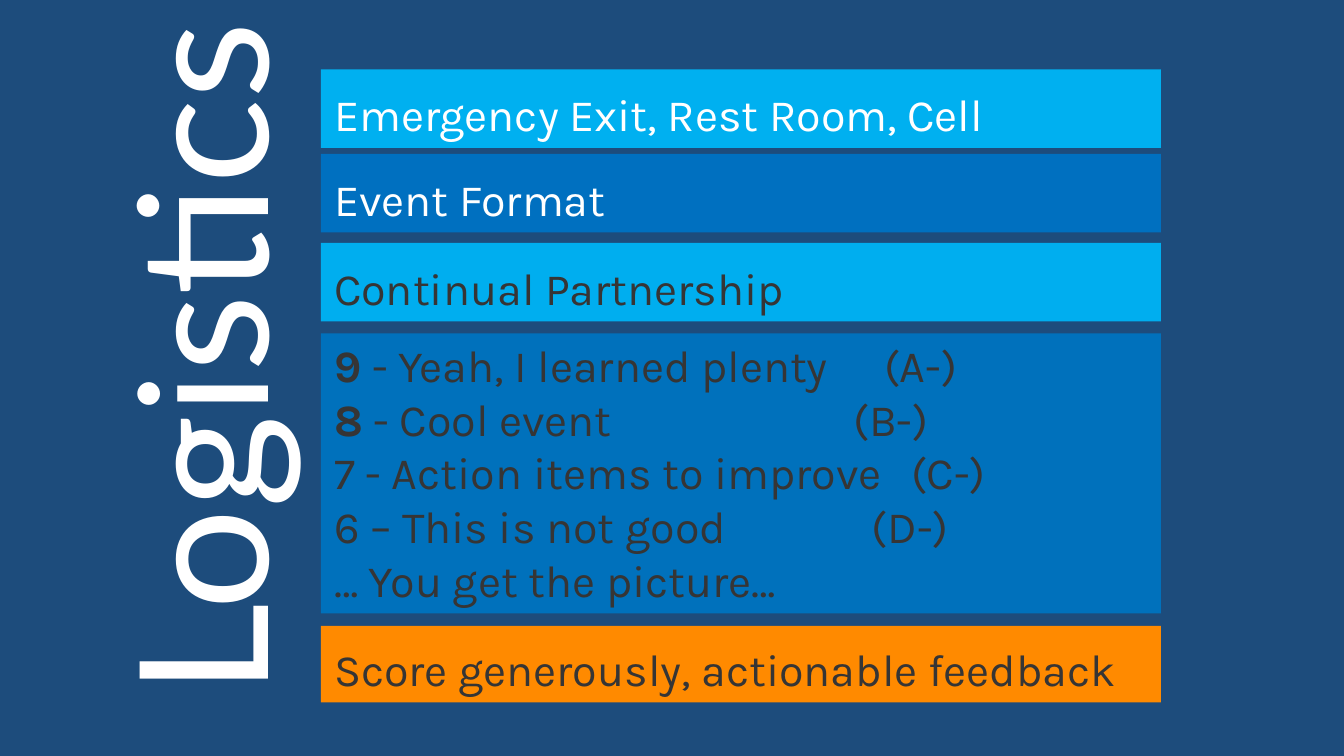
"""Build the Logistics slide: a vertical title beside five stacked bars."""
from pptx import Presentation
from pptx.dml.color import RGBColor
from pptx.enum.shapes import MSO_SHAPE
from pptx.enum.text import MSO_ANCHOR, PP_ALIGN
from pptx.oxml.ns import qn
from pptx.util import Cm, Pt
from lxml.etree import SubElement

NAVY = RGBColor(0x1D, 0x4C, 0x7C)
SKY = RGBColor(0x00, 0xB0, 0xF0)
CYAN = RGBColor(0x00, 0xAE, 0xEF)
BLUE = RGBColor(0x00, 0x70, 0xC0)
COBALT = RGBColor(0x00, 0x71, 0xBC)
ORANGE = RGBColor(0xFF, 0x8A, 0x00)
WHITE = RGBColor(0xFF, 0xFF, 0xFF)
DARK = RGBColor(0x36, 0x35, 0x35)

TITLE = "Logistics"
SCORES = [
    ("9", " - Yeah, I learned plenty", "(A-)", 13.86),
    ("8", " - Cool event", "(B-)", 13.08),
    ("", "7 - Action items to improve", "(C-)", 14.54),
    ("", "6 – This is not good", "(D-)", 13.55),
    ("", "… You get the picture…", "", 0),
]
BARS = [
    (1.75, 1.98, SKY, WHITE, [("", "Emergency Exit, Rest Room, Cell", "", 0)]),
    (3.88, 1.98, BLUE, WHITE, [("", "Event Format", "", 0)]),
    (6.12, 1.98, CYAN, DARK, [("", "Continual Partnership", "", 0)]),
    (8.4, 7.06, COBALT, DARK, SCORES),
    (15.77, 1.93, ORANGE, DARK, [("", "Score generously, actionable feedback", "", 0)]),
]
LEFT, WIDTH = 8.09, 21.17
FRAME = {"margin_left": Cm(0.33), "margin_right": Cm(0.33),
         "margin_top": Cm(0.18), "margin_bottom": Cm(0.18),
         "vertical_anchor": MSO_ANCHOR.BOTTOM, "word_wrap": True}
HEAD = {"margin_left": 0, "margin_right": 0, "margin_top": 0,
        "margin_bottom": 0, "word_wrap": True}


def style(item, form):
    for key, value in form.items():
        setattr(item, key, value)


def write(para, text, name, size, color, bold=False):
    run = para.add_run()
    run.text = text
    style(run.font, {"name": name, "size": Pt(size), "bold": bold})
    run.font.color.rgb = color


def add_bar(slide, top, height, fill, color, lines):
    bar = slide.shapes.add_shape(
        MSO_SHAPE.RECTANGLE, Cm(LEFT), Cm(top), Cm(WIDTH), Cm(height))
    bar.shadow.inherit = False
    bar.fill.solid()
    bar.fill.fore_color.rgb = fill
    bar.line.fill.background()
    frame = bar.text_frame
    style(frame, FRAME)
    for num, (mark, text, grade, stop) in enumerate(lines):
        para = frame.add_paragraph() if num else frame.paragraphs[0]
        para.alignment = PP_ALIGN.LEFT
        if grade:
            tabs = SubElement(para._p.get_or_add_pPr(), qn("a:tabLst"))
            SubElement(tabs, qn("a:tab"), pos=str(Cm(stop)), algn="l")
            text += "\t" + grade
        if mark:
            write(para, mark, "Karla", 32, color, True)
        write(para, text, "Karla", 32, color)


def add_title(slide):
    box = slide.shapes.add_textbox(Cm(2.26), Cm(0), Cm(5.46), Cm(17.53))
    frame = box.text_frame
    style(frame, HEAD)
    frame._txBody.bodyPr.set("vert", "vert270")
    write(frame.paragraphs[0], TITLE, "Lato", 128, WHITE)


def main():
    deck = Presentation()
    style(deck, {"slide_width": Cm(33.87), "slide_height": Cm(19.05)})
    slide = deck.slides.add_slide(deck.slide_layouts[6])
    back = slide.background.fill
    back.solid()
    back.fore_color.rgb = NAVY
    for bar in BARS:
        add_bar(slide, *bar)
    add_title(slide)
    deck.save("out.pptx")


if __name__ == "__main__":
    main()
